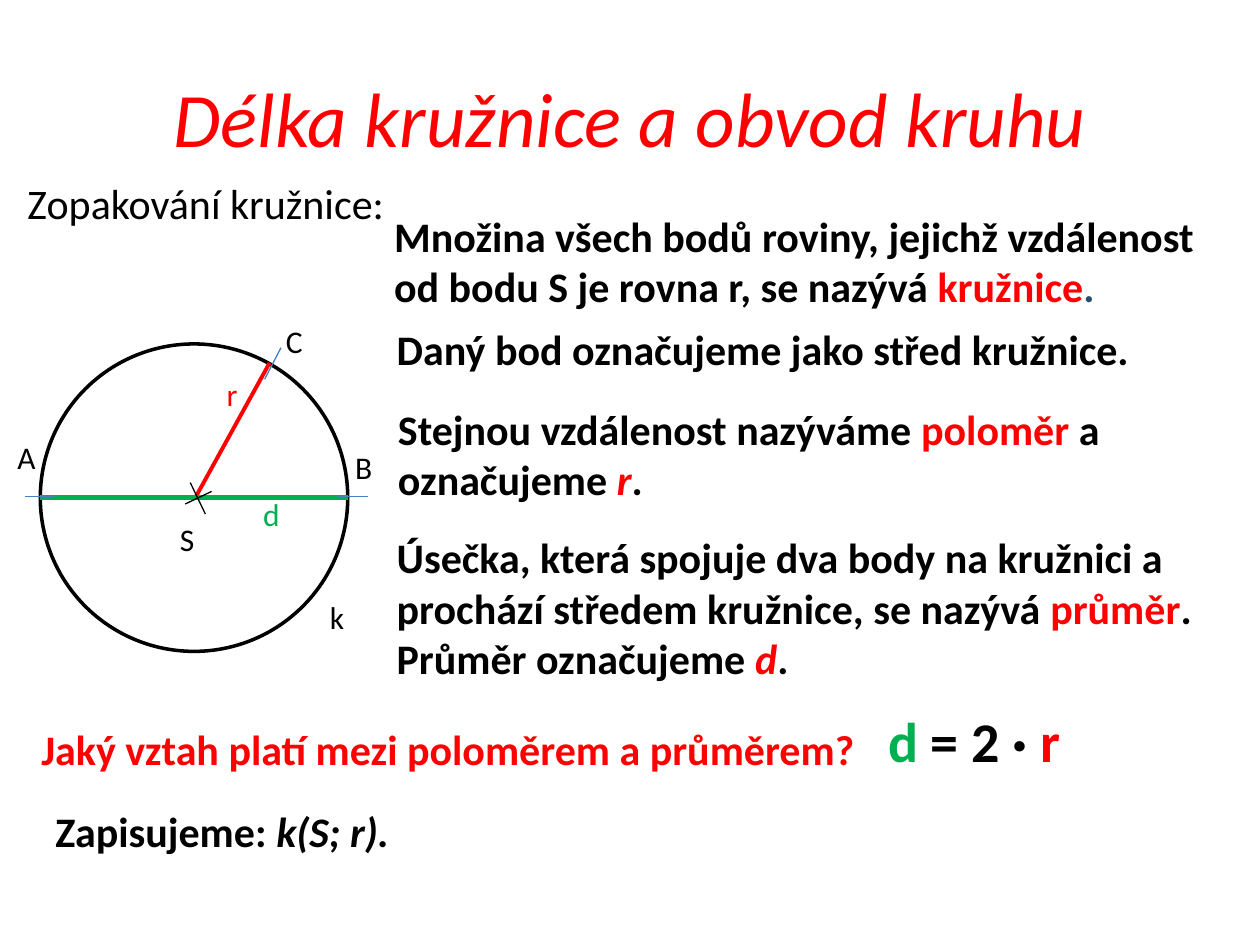
"""Build a slide that reviews the circle, its radius and its diameter."""
import pptx
import pptx.dml.color
import pptx.enum.shapes
import pptx.enum.text
import pptx.oxml
import pptx.oxml.ns
import pptx.util

Inches = pptx.util.Inches
ANCHOR = pptx.enum.text.MSO_ANCHOR

THEME = {
    "font": "Calibri",
    "black": "000000", "red": "FF0000", "green": "00B050",
    "blue": "4B7EBC", "navy": "284C6A",
    "title": 44, "formula": 32, "body": 24, "label": 18,
    "thin": 0.75, "outline": 2, "radius": 2.25, "diameter": 3,
}

TITLE = ("Délka kružnice a obvod kruhu", "red", "i")
TITLE_BOX = (0.5, 0.3, 9, 1.25)

STATEMENTS = [
    ((0.12, 1.36, 3.06, 0.5), False, [("Zopakování kružnice:", "black", "")]),
    ((3.03, 1.62, 6.63, 0.91), True, [
        ("Množina všech bodů roviny, jejichž vzdálenost od bodu S je rovna r, se\u00a0nazývá ", "black", "b"),
        ("kružnice", "red", "b"), (".", "navy", "b")]),
    ((3.05, 2.52, 6.29, 0.5), True, [
        ("Daný bod označujeme jako střed kružnice.", "black", "b")]),
    ((3.06, 3.15, 6.82, 0.91), True, [
        ("Stejnou vzdálenost nazýváme ", "black", "b"), ("poloměr ", "red", "b"),
        ("a označujeme ", "black", "b"), ("r", "red", "bi"), (".", "black", "b")]),
    ((3.05, 4.17, 6.66, 1.31), True, [
        ("Úsečka, která spojuje dva body na kružnici a prochází středem kružnice, se nazývá ", "black", "b"),
        ("průměr", "red", "b"), (". Průměr označujeme ", "black", "b"),
        ("d", "red", "bi"), (".", "black", "b")]),
    ((0.23, 5.69, 6.66, 0.5), True, [
        ("Jaký vztah platí mezi poloměrem a průměrem?", "red", "b")]),
    ((0.34, 6.34, 2.88, 0.5), False, [
        ("Zapisujeme: ", "black", "b"), ("k(S; r).", "black", "bi")]),
]

FORMULA_BOX = (6.95, 5.56, 2.76, 0.63)
FORMULA = [("d ", "green", "b"), ("= 2 · ", "black", "b"), ("r", "red", "b")]

LABEL_SIZE = (0.31, 0.4)
LABELS = [
    ("d", "green", 1.99, 3.88), ("B", "black", 2.72, 3.51),
    ("S", "black", 1.33, 4.08), ("r", "red", 1.7, 2.93),
    ("k", "black", 2.52, 4.7), ("A", "black", 0.04, 3.43),
    ("C", "black", 2.17, 2.51),
]

LEFT, TOP, DIAMETER = 0.32, 2.73, 2.44
CENTER_Y = TOP + DIAMETER / 2
SEGMENTS = [
    ((2.14, 2.88, 1.55, CENTER_Y), "red", "radius"),
    ((LEFT, CENTER_Y, LEFT + DIAMETER, CENTER_Y), "green", "diameter"),
]
CENTER_CROSS = [(1.51, 3.83, 1.63, 4.08), (1.47, 4, 1.68, 3.9)]
POINT_TICKS = [(0.2, 3.94, 0.43, 3.94), (2.68, 3.94, 2.92, 3.94), (2.1, 3.01, 2.23, 2.76)]


def color(name):
    """Return a theme colour."""
    return pptx.dml.color.RGBColor.from_string(THEME[name])


def apply(obj, values):
    """Set attributes from a dict of format values."""
    for name, value in values.items():
        setattr(obj, name, value)


def write_runs(p, runs, size):
    """Add the styled runs to a paragraph."""
    for text, tint, style in runs:
        r = p.add_run()
        r.text = text
        apply(r.font, {"name": THEME["font"], "size": pptx.util.Pt(THEME[size]),
                       "bold": "b" in style, "italic": "i" in style})
        r.font.color.rgb = color(tint)


def add_text(shapes, box, runs, size, wrap=True, anchor=ANCHOR.TOP):
    """Add a text box."""
    tf = shapes.add_textbox(*map(Inches, box)).text_frame
    apply(tf, {"word_wrap": wrap, "vertical_anchor": anchor})
    write_runs(tf.paragraphs[0], runs, size)


def add_line(shapes, ends, tint, width):
    """Add a straight line without a shadow."""
    c = shapes.add_connector(pptx.enum.shapes.MSO_CONNECTOR.STRAIGHT, *map(Inches, ends))
    c.line.color.rgb = color(tint)
    c.line.width = pptx.util.Pt(THEME[width])
    c._element.spPr.append(pptx.oxml.parse_xml(
        "<a:effectLst %s/>" % pptx.oxml.ns.nsdecls("a")))


def add_title(s):
    """Place and format the title placeholder."""
    sp = s.shapes.title
    apply(sp, dict(zip(("left", "top", "width", "height"), map(Inches, TITLE_BOX))))
    tf = sp.text_frame
    tf.vertical_anchor = ANCHOR.MIDDLE
    p = tf.paragraphs[0]
    p.alignment = pptx.enum.text.PP_ALIGN.CENTER
    write_runs(p, [TITLE], "title")


def add_circle(s):
    """Draw the circle with its segments, centre mark, ticks and labels."""
    sp = s.shapes.add_shape(pptx.enum.shapes.MSO_SHAPE.OVAL,
                            *map(Inches, (LEFT, TOP, DIAMETER, DIAMETER)))
    sp.shadow.inherit = False
    sp.fill.background()
    sp.line.color.rgb = color("black")
    sp.line.width = pptx.util.Pt(THEME["outline"])
    for ends, tint, width in SEGMENTS:
        add_line(s.shapes, ends, tint, width)
    cross = s.shapes.add_group_shape()
    for ends in CENTER_CROSS:
        add_line(cross.shapes, ends, "black", "thin")
    for text, tint, x, y in LABELS:
        add_text(s.shapes, (x, y, *LABEL_SIZE), [(text, tint, "")], "label")
    for ends in POINT_TICKS:
        add_line(s.shapes, ends, "blue", "thin")


def main():
    """Build and save the slide."""
    prs = pptx.Presentation()
    apply(prs, {"slide_width": Inches(10), "slide_height": Inches(7.5)})
    s = prs.slides.add_slide(prs.slide_layouts[5])
    add_title(s)
    add_circle(s)
    for box, wrap, runs in STATEMENTS:
        add_text(s.shapes, box, runs, "body", wrap)
    add_text(s.shapes, FORMULA_BOX, FORMULA, "formula", anchor=ANCHOR.MIDDLE)
    prs.save("out.pptx")


if __name__ == "__main__":
    main()
